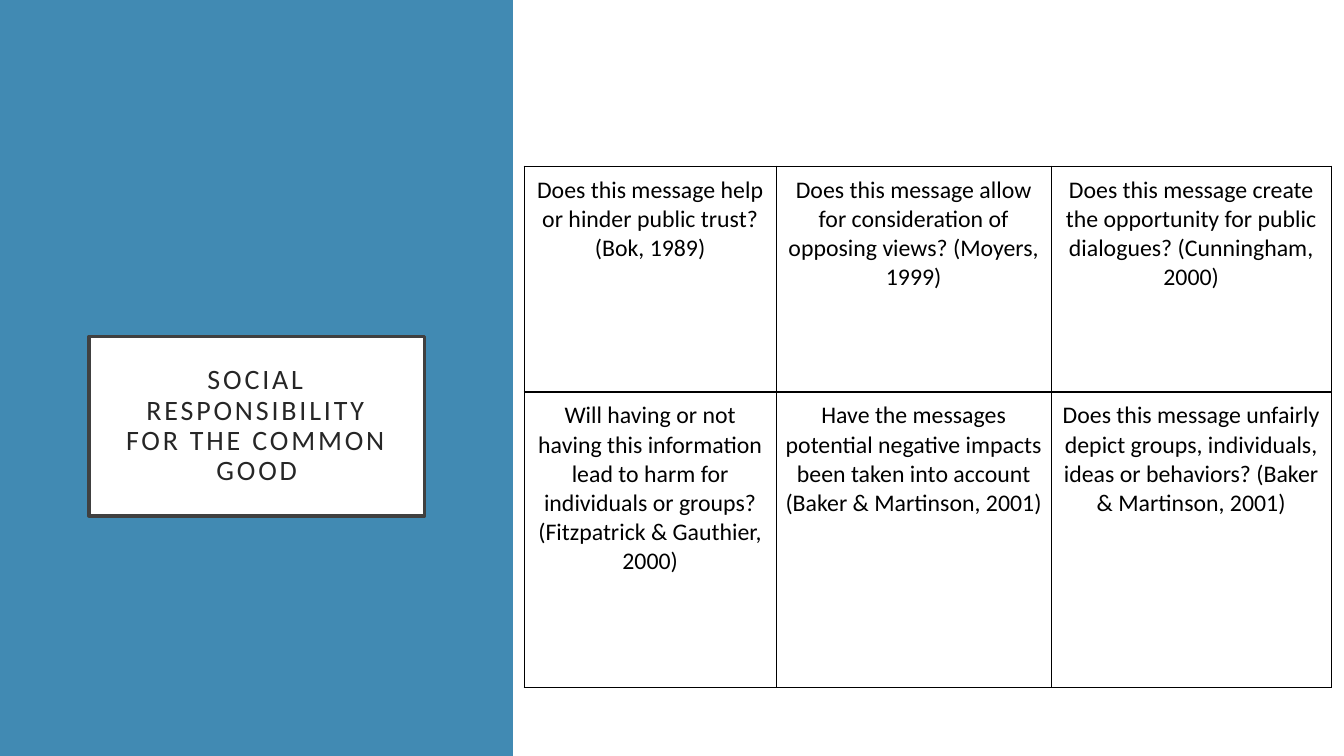
from lxml import etree
from pptx import Presentation
from pptx.dml.color import RGBColor
from pptx.enum.shapes import MSO_SHAPE as Shape
from pptx.enum.text import MSO_ANCHOR as Anchor, PP_ALIGN as Align
from pptx.oxml import parse_xml
from pptx.oxml.ns import nsdecls
from pptx.util import Cm, Pt

BLUE = RGBColor(0x41, 0x8A, 0xB3)
WHITE = RGBColor(0xFF, 0xFF, 0xFF)
GREY = RGBColor(0x40, 0x40, 0x40)
INK = RGBColor(0x26, 0x26, 0x26)
BLACK = RGBColor(0, 0, 0)

COLS = [6.35, 6.93, 7.06]
ROWS = [5.69, 7.44]
ITEMS = [
    ["Does this message help or hinder public trust? (Bok, 1989)",
     "Does this message allow for consideration of opposing views? (Moyers, 1999)",
     "Does this message create the opportunity for public dialogues? (Cunningham, 2000)"],
    ["Will having or not having this information lead to harm for individuals "
     "or groups? (Fitzpatrick & Gauthier, 2000)",
     "Have the messages potential negative impacts been taken into account "
     "(Baker & Martinson, 2001)",
     "Does this message unfairly depict groups, individuals, ideas or behaviors? "
     "(Baker & Martinson, 2001)"],
]


def add_text(frame, text, size, color):
    """Fill the first paragraph with one centred run and return both."""
    para = frame.paragraphs[0]
    para.alignment = Align.CENTER
    run = para.add_run()
    run.text = text
    run.font.name = "Calibri"
    run.font.size = Pt(size)
    run.font.color.rgb = color
    return para, run


def add_box(left, top, width, height):
    """Add a white rectangle without line or shadow; lengths in cm."""
    box = slide.shapes.add_shape(
        Shape.RECTANGLE, Cm(left), Cm(top), Cm(width), Cm(height))
    box.shadow.inherit = False
    box.fill.solid()
    box.fill.fore_color.rgb = WHITE
    box.line.fill.background()
    return box


deck = Presentation()
deck.slide_width = Cm(33.87)
deck.slide_height = Cm(19.05)
slide = deck.slides.add_slide(deck.slide_layouts[6])
slide.background.fill.solid()
slide.background.fill.fore_color.rgb = BLUE

# Title box
title = add_box(2.24, 8.48, 8.46, 4.52)
title.line.color.rgb = GREY
title.line.width = Pt(2.5)
frame = title.text_frame
frame.word_wrap = True
frame.vertical_anchor = Anchor.MIDDLE
frame.margin_left = frame.margin_right = Cm(0.76)
frame.margin_top = frame.margin_bottom = Cm(0.51)
para, run = add_text(frame, "SOCIAL RESPONSIBILITY FOR THE COMMON GOOD", 20, INK)
para.line_spacing = 0.9
run.font._element.set("spc", "200")

# White panel behind the table
add_box(12.93, 0, 20.94, 19.05)

# Table of questions
holder = slide.shapes.add_table(
    len(ROWS), len(COLS), Cm(13.21), Cm(4.19), Cm(sum(COLS)), Cm(sum(ROWS)))
table = holder.table
table.first_row = False
table.horz_banding = False
for col, width in zip(table.columns, COLS):
    col.width = Cm(width)
for row, height, texts in zip(table.rows, ROWS, ITEMS):
    row.height = Cm(height)
    for cell, text in zip(row.cells, texts):
        cell.margin_left = cell.margin_right = Cm(0.23)
        cell.margin_top = cell.margin_bottom = Cm(0.23)
        cell.fill.background()
        add_text(cell.text_frame, text, 17, BLACK)
        props = cell._tc.get_or_add_tcPr()
        for spot, side in enumerate("LRTB"):
            edge = parse_xml(f'<a:ln{side} {nsdecls("a")} w="{Pt(1)}"/>')
            fill = etree.SubElement(edge, edge.tag.replace(f"ln{side}", "solidFill"))
            etree.SubElement(fill, edge.tag.replace(f"ln{side}", "srgbClr"), val=str(BLACK))
            props.insert(spot, edge)

deck.save("out.pptx")
